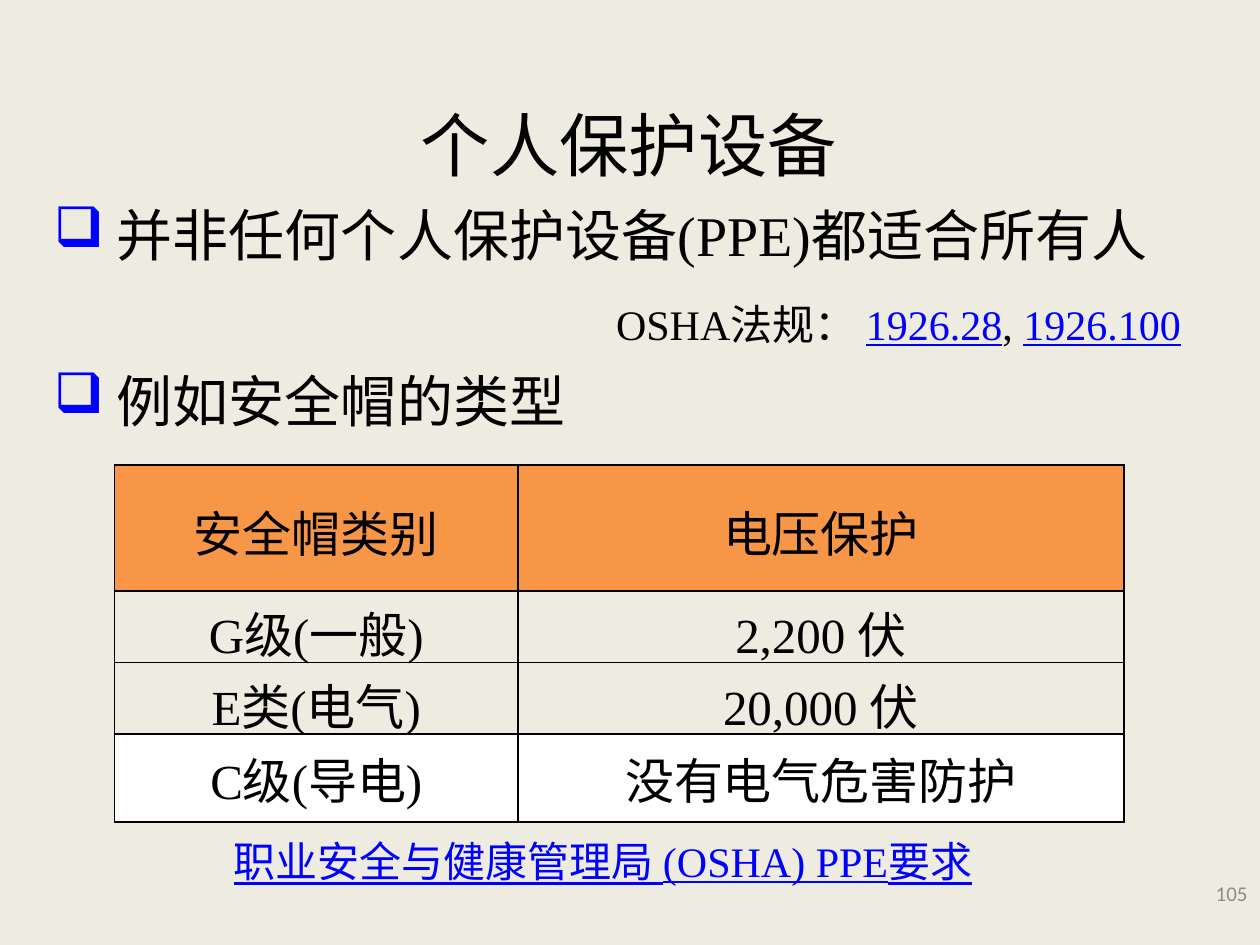
from lxml.etree import SubElement
from pptx import Presentation
from pptx.dml.color import RGBColor
from pptx.enum.text import MSO_ANCHOR, PP_ALIGN
from pptx.oxml import parse_xml
from pptx.oxml.ns import nsdecls, qn
from pptx.util import Inches, Pt

SERIF = "Times New Roman"
BLACK, BLUE, GRAY = "000000", "0000FF", "8C8C8C"
SAND, ORANGE, WHITE = "EEECE1", "F79646", "FFFFFF"


def tint(code):
    return RGBColor.from_string(code)


def write(para, parts, size, font=SERIF):
    """Add (text, colour, underline) parts, one run each."""
    for text, code, line in parts:
        run = para.add_run()
        run.text = text
        run.font.size, run.font.name = Pt(size), font
        run.font.color.rgb = tint(code)
        run.font.underline = line


def label(slide, box, parts, size, align=PP_ALIGN.CENTER,
          anchor=MSO_ANCHOR.TOP, font=SERIF):
    frame = slide.shapes.add_textbox(*map(Inches, box)).text_frame
    frame.word_wrap = True
    frame.vertical_anchor = anchor
    para = frame.paragraphs[0]
    para.alignment = align
    write(para, parts, size, font)
    return para


def bullet(slide, box, text):
    """A line with a blue square bullet and a hanging indent."""
    para = label(slide, box, [(text, BLACK, False)], 32, PP_ALIGN.LEFT)
    props = para._p.get_or_add_pPr()
    props.set("marL", str(Inches(0.5)))
    props.set("indent", str(Inches(-0.5)))
    color = SubElement(props, qn("a:buClr"))
    SubElement(color, qn("a:srgbClr"), val=BLUE)
    SubElement(props, qn("a:buChar"), char="❑")


def border(cell):
    props = cell._tc.get_or_add_tcPr()
    for spot, side in enumerate(("lnL", "lnR", "lnT", "lnB")):
        props.insert(spot, parse_xml(
            f'<a:{side} {nsdecls("a")} w="{Pt(1)}"><a:solidFill>'
            f'<a:srgbClr val="{BLACK}"/></a:solidFill></a:{side}>'))


def grid(slide, box, cols, rows, data, fills):
    shape = slide.shapes.add_table(len(rows), len(cols), *map(Inches, box))
    table = shape.table
    table.first_row = table.horz_banding = False
    for col, wide in zip(table.columns, cols):
        col.width = Inches(wide)
    for row, high, texts, fill in zip(table.rows, rows, data, fills):
        row.height = Inches(high)
        head = fill == ORANGE
        for cell, text in zip(row.cells, texts):
            if fill:
                cell.fill.solid()
                cell.fill.fore_color.rgb = tint(fill)
            else:
                cell.fill.background()
            border(cell)
            cell.vertical_anchor = MSO_ANCHOR.MIDDLE
            cell.margin_top = Inches(0.19 if head else 0.05)
            para = cell.text_frame.paragraphs[0]
            para.alignment = PP_ALIGN.CENTER
            if head:
                para.line_spacing = 0.76
            write(para, [(text, BLACK, False)], 28)
    # The frame is taller than its rows, which stretch to fill it
    shape.height = Inches(box[3])


def main():
    deck = Presentation()
    deck.slide_width, deck.slide_height = Inches(10), Inches(7.5)
    slide = deck.slides.add_slide(deck.slide_layouts[6])
    slide.background.fill.solid()
    slide.background.fill.fore_color.rgb = tint(SAND)

    # Title and page number
    label(slide, (0.11, 0.83, 9.64, 0.62), [(" 个人保护设备", BLACK, False)],
          39.6, anchor=MSO_ANCHOR.MIDDLE)
    label(slide, (7.75, 6.89, 2.25, 0.4), [("105", GRAY, False)], 12,
          PP_ALIGN.RIGHT, MSO_ANCHOR.MIDDLE, "Calibri")

    # Points and rule numbers
    bullet(slide, (0.33, 1.54, 9.17, 0.64), "并非任何个人保护设备(PPE)都适合所有人")
    label(slide, (4.34, 2.32, 5.58, 0.5),
          [("OSHA法规： ", BLACK, False), ("1926.28", BLUE, True),
           (", ", BLACK, False), ("1926.100", BLUE, True)], 24)
    bullet(slide, (0.33, 2.86, 8.16, 0.64), "例如安全帽的类型")

    # Hard hat classes
    grid(slide, (0.91, 3.69, 8.01, 2.83), (3.2, 4.81), (1, 0.4, 0.4, 0.7),
         [("安全帽类别", "电压保护"),
          ("G级(一般)", "2,200 伏"),
          ("E类(电气)", "20,000 伏"),
          ("C级(导电)", "没有电气危害防护")],
         (ORANGE, None, None, WHITE))

    # Closing reference
    label(slide, (0.78, 6.58, 8.01, 0.5),
          [("职业安全与健康管理局 (OSHA) PPE要求", BLUE, True)], 24)

    deck.save("out.pptx")


if __name__ == "__main__":
    main()
